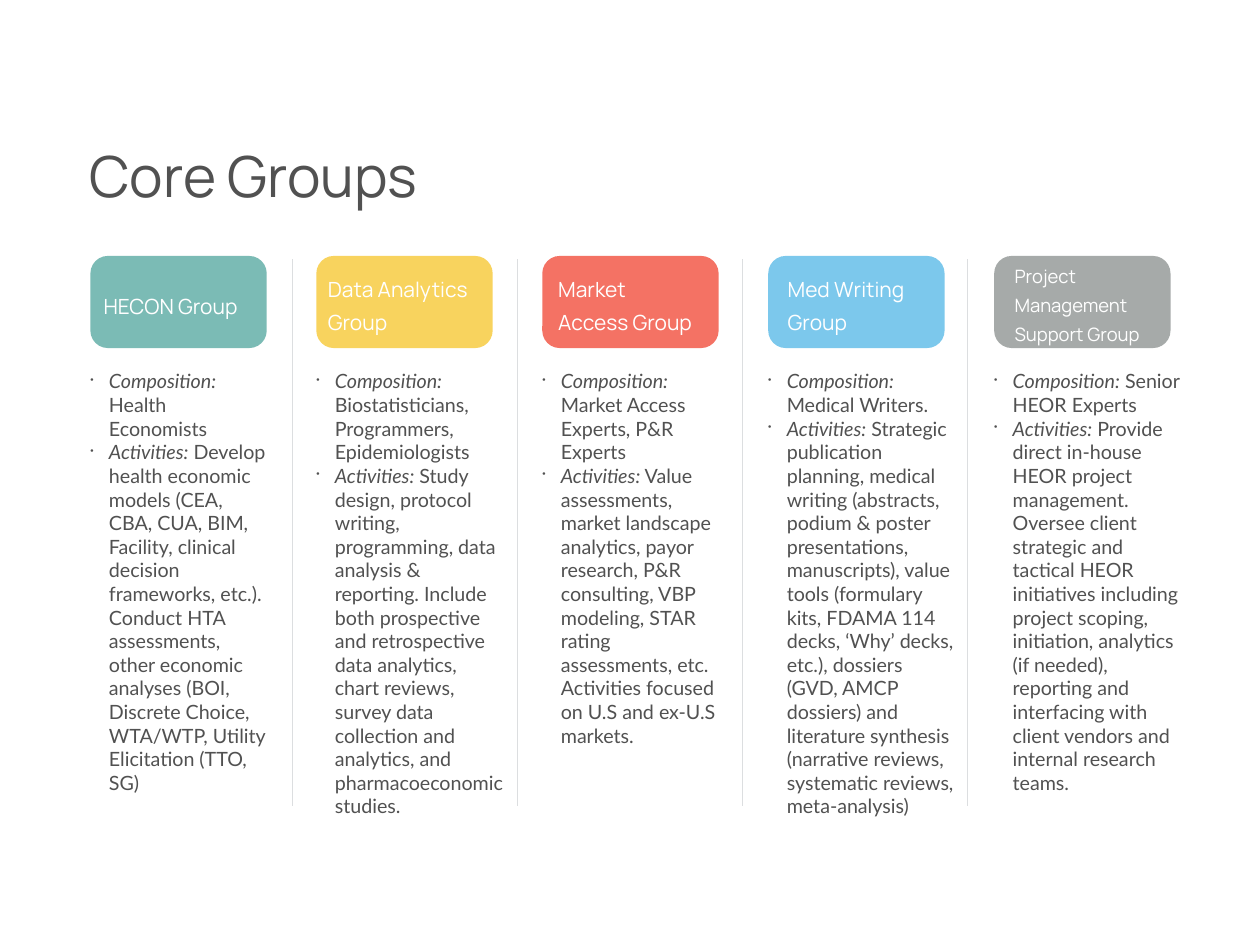
from lxml import etree
from pptx import Presentation, util as u
from pptx.dml.color import RGBColor
from pptx.enum import shapes, text
from pptx.oxml.ns import qn

HUES = {"ink": "515151", "white": "FFFFFF", "rule": "DCDEE0", "teal": "7BBBB5",
        "gold": "F8D35E", "coral": "F47264", "sky": "7CC8EC", "gray": "A6AAA9"}
LEFT, STEP, TOP = 1.02, 2.55, 2.89
WIDE, HIGH, BODY = 1.99, 1.04, 4.17
MID = TOP + HIGH / 2

GROUPS = [
    ("HECON Group", "teal", 17, (0.12, 1.78, 0.34), (1.99, 4.85),
     "Health Economists",
     "Develop health economic models (CEA, CBA, CUA, BIM, Facility, clinical decision "
     "frameworks, etc.). Conduct HTA assessments, other economic analyses (BOI, Discrete "
     "Choice, WTA/WTP, Utility Elicitation (TTO, SG)"),
    ("Data Analytics Group", "gold", 17, (0.1, 1.78, 0.7), (2.14, 5.12),
     "Biostatisticians, Programmers, Epidemiologists",
     "Study design, protocol writing, programming, data analysis & reporting. Include both "
     "prospective and retrospective data analytics, chart reviews, survey data collection "
     "and analytics, and pharmacoeconomic studies."),
    ("Market Access Group", "coral", 17, (0.15, 1.65, 0.7), (1.99, 4.58),
     "Market Access Experts, P&R Experts",
     "Value assessments, market landscape analytics, payor research, P&R consulting, VBP "
     "modeling, STAR rating assessments, etc. Activities focused on U.S and ex-U.S markets."),
    ("Med Writing Group", "sky", 17, (0.19, 1.63, 0.7), (2.14, 5.65),
     "Medical Writers.",
     "Strategic publication planning, medical writing (abstracts, podium & poster "
     "presentations, manuscripts), value tools (formulary kits, FDAMA 114 decks, ‘Why’ "
     "decks, etc.), dossiers (GVD, AMCP dossiers) and literature synthesis (narrative "
     "reviews, systematic reviews, meta-analysis)"),
    ("Project Management Support Group", "gray", 15, (0.2, 1.65, 0.96), (2.14, 5.12),
     "Senior HEOR Experts",
     "Provide direct in-house HEOR project management. Oversee client strategic and "
     "tactical HEOR initiatives including project scoping, initiation, analytics (if "
     "needed), reporting and interfacing with client vendors and internal research teams."),
]

deck = Presentation()
deck.slide_width, deck.slide_height = u.Inches(14.22), u.Inches(10.67)
slide = deck.slides.add_slide(deck.slide_layouts[6])


def add_box(x, y, w, h, pad, anchor):
    frame = slide.shapes.add_textbox(*map(u.Inches, (x, y, w, h))).text_frame
    form = {"word_wrap": True, "vertical_anchor": anchor,
            "auto_size": text.MSO_AUTO_SIZE.SHAPE_TO_FIT_TEXT}
    for side in ("left", "right", "top", "bottom"):
        form["margin_" + side] = u.Inches(pad)
    for key, value in form.items():
        setattr(frame, key, value)
    return frame


def add_run(para, words, size, face, hue, slant=False):
    run = para.add_run()
    run.text = words
    for key, value in {"size": u.Pt(size), "name": face, "italic": slant}.items():
        setattr(run.font, key, value)
    run.font.color.rgb = RGBColor.from_string(HUES[hue])


heads = [("Core Groups", 46, "ink", (0.98, 1.46, 9.71, 0.81))]

for col in range(len(GROUPS) - 1):
    x = u.Inches(3.3 + col * 2.54)
    rule = slide.shapes.add_connector(
        shapes.MSO_CONNECTOR.STRAIGHT, x, u.Inches(9.1), x, u.Inches(2.92))
    rule.line.color.rgb = RGBColor.from_string(HUES["rule"])
    rule.line.width = u.Pt(1)
    etree.SubElement(rule._element.spPr, qn("a:effectLst"))

for col, (name, hue, size, label, body, team, tasks) in enumerate(GROUPS):
    x = LEFT + col * STEP
    card = slide.shapes.add_shape(
        shapes.MSO_SHAPE.ROUNDED_RECTANGLE, *map(u.Inches, (x, TOP, WIDE, HIGH)))
    card.adjustments[0] = 0.19
    card.shadow.inherit = False
    card.fill.solid()
    card.fill.fore_color.rgb = RGBColor.from_string(HUES[hue])
    card.line.fill.background()

    shift, w, h = label
    heads.append((name, size, "white", (x + shift, MID - h / 2, w, h)))

    frame = add_box(x, BODY, *body, 0, text.MSO_ANCHOR.TOP)
    for row, (lead, words) in enumerate((("Composition:", team), ("Activities:", tasks))):
        para = frame.add_paragraph() if row else frame.paragraphs[0]
        props = para._p.get_or_add_pPr()
        props.set("marL", str(u.Inches(0.21)))
        props.set("indent", str(u.Inches(-0.21)))
        etree.SubElement(props, qn("a:buSzPct"), val="50000")
        etree.SubElement(props, qn("a:buChar"), char="•")
        add_run(para, lead, 16, "Lato", "ink", True)
        add_run(para, " " + words, 16, "Lato", "ink")

for words, size, hue, place in heads:
    para = add_box(*place, 0.03, text.MSO_ANCHOR.MIDDLE).paragraphs[0]
    para.line_spacing = 1.3
    add_run(para, words, size, "Manrope", hue)

deck.save("out.pptx")
